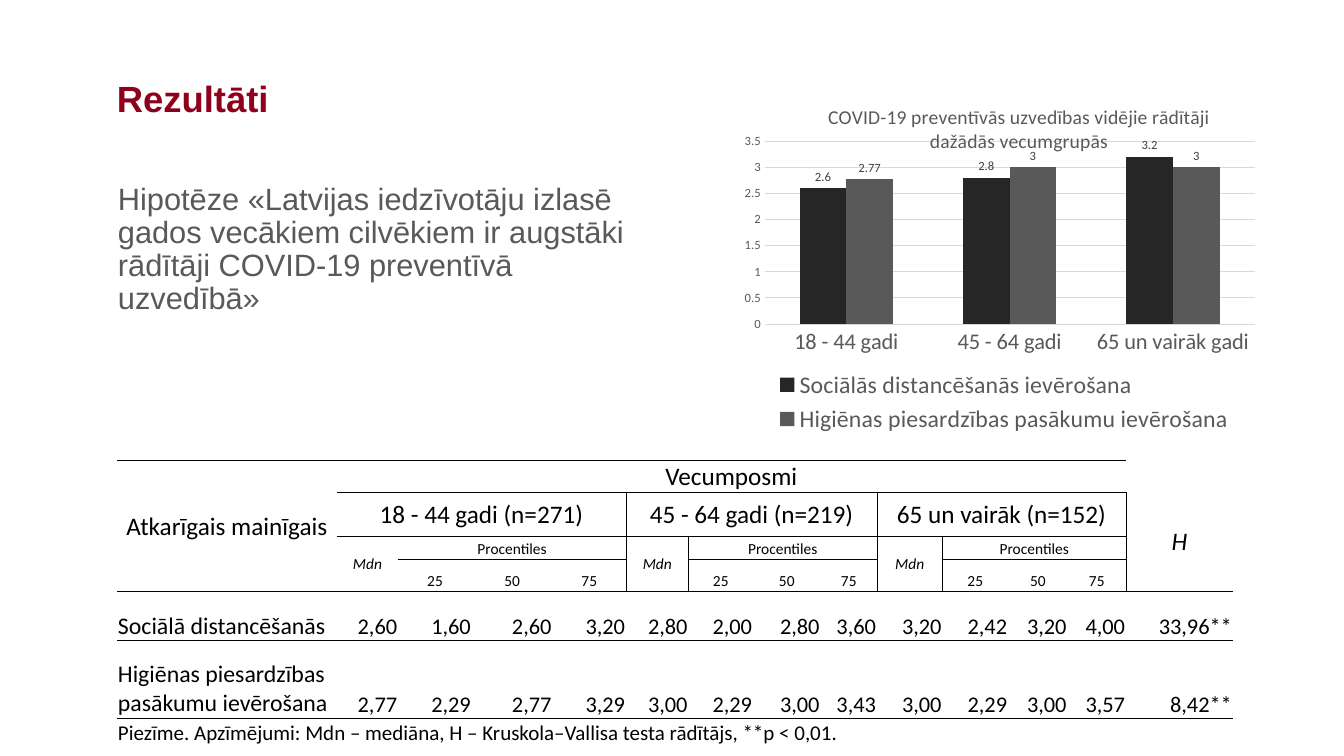
from pptx import Presentation
from pptx import util as u
from pptx.chart.data import CategoryChartData
from pptx.dml.color import RGBColor
from pptx.enum import chart as ch, text as t
from pptx.oxml import parse_xml
from pptx.oxml.ns import nsdecls

# Content
TITLE = "Rezultāti"
CLAIM = ("Hipotēze «Latvijas iedzīvotāju izlasē gados vecākiem cilvēkiem ir "
         "augstāki rādītāji COVID-19 preventīvā uzvedībā»")
HEAD = "COVID-19 preventīvās uzvedības vidējie rādītāji dažādās vecumgrupās"
AGES = ["18 - 44 gadi", "45 - 64 gadi", "65 un vairāk gadi"]
GROUPS = ["18 - 44 gadi (n=271)", "45 - 64 gadi (n=219)", "65 un vairāk (n=152)"]
RANKS = ["25", "50", "75"]
DATA = [
    ["Sociālā distancēšanās", "2,60", "1,60", "2,60", "3,20", "2,80", "2,00",
     "2,80", "3,60", "3,20", "2,42", "3,20", "4,00", "33,96**"],
    ["Higiēnas piesardzības pasākumu ievērošana", "2,77", "2,29", "2,77", "3,29",
     "3,00", "2,29", "3,00", "3,43", "3,00", "2,29", "3,00", "3,57", "8,42**"],
]
NOTE = ("Piezīme. Apzīmējumi: Mdn – mediāna, H – Kruskola–Vallisa testa "
        "rādītājs, **p < 0,01.")
COLS = [218, 61, 73, 80, 73, 62, 64, 67, 56, 65, 65, 59, 58, 106]
ROWS = [31, 44, 22, 32, 49, 77, 28]
# Table rules as row, first column, end column
RULES = [(0, 0, 13), (1, 1, 13), (2, 1, 13), (3, 2, 5), (3, 6, 9), (3, 10, 13),
         (4, 0, 14), (6, 0, 14)]

RED = RGBColor(0x8E, 0x00, 0x1C)
SLATE = RGBColor(0x58, 0x59, 0x5B)
GRAY = RGBColor(0x59, 0x59, 0x59)
DARK = RGBColor(0x26, 0x26, 0x26)
LABEL = RGBColor(0x40, 0x40, 0x40)
GRID = RGBColor(0xD9, 0xD9, 0xD9)
BLACK = RGBColor(0, 0, 0)
SERIES = [("Sociālās distancēšanās ievērošana", (2.6, 2.8, 3.2), DARK),
          ("Higiēnas piesardzības pasākumu ievērošana", (2.77, 3, 3), GRAY)]
LEFT, MID, RIGHT = t.PP_ALIGN.LEFT, t.PP_ALIGN.CENTER, t.PP_ALIGN.RIGHT
TOP, HALF, LOW = t.MSO_ANCHOR.TOP, t.MSO_ANCHOR.MIDDLE, t.MSO_ANCHOR.BOTTOM


def px(n):
    return u.Emu(n * 9144)  # 100 px to the inch


def style(font, size, color, face="Calibri", bold=False, ital=False):
    font.name, font.size, font.bold, font.italic = face, u.Pt(size), bold, ital
    font.color.rgb = color


def write(frame, words, size=18, color=BLACK, align=LEFT, space=None, **kw):
    para = frame.paragraphs[0]
    para.alignment = align
    if space:
        para.line_spacing = space
    run = para.add_run()
    run.text = words
    style(run.font, size, color, **kw)


def block(shape, box, words, **kw):
    shape.left, shape.top, shape.width, shape.height = map(px, box)
    frame = shape.text_frame
    frame.word_wrap = True
    frame.auto_size = t.MSO_AUTO_SIZE.NONE
    frame.vertical_anchor = TOP
    frame.margin_left = frame.margin_right = frame.margin_top = frame.margin_bottom = 0
    write(frame, words, space=0.9, face="Arial", **kw)


def arrange(node, spot, kind="", **pos):
    """Put a chart part at a place given in shares of the chart."""
    for old in node.findall("{*}layout"):
        node.remove(old)
    modes = '<c:xMode val="edge"/><c:yMode val="edge"/>'
    vals = "".join(f'<c:{k} val="{v}"/>' for k, v in pos.items())
    node.insert(spot, parse_xml(f'<c:layout {nsdecls("c")}><c:manualLayout>{kind}{modes}'
                                f"{vals}</c:manualLayout></c:layout>"))


def draw_chart(slide):
    data = CategoryChartData()
    data.categories = AGES
    for name, vals, _ in SERIES:
        data.add_series(name, vals)
    chart = slide.shapes.add_chart(ch.XL_CHART_TYPE.COLUMN_CLUSTERED, px(726), px(57),
                                   px(540), px(378), data).chart
    style(chart.font, 10, BLACK)
    chart.has_title = True
    write(chart.chart_title.text_frame, HEAD, size=14, color=GRAY, align=MID)
    arrange(chart.chart_title._element, 1, x=0.17, y=0.11)

    # Plot and series
    plot = chart.plots[0]
    plot.gap_width, plot.overlap, plot.vary_by_categories = 150, 0, False
    arrange(chart._chartSpace.chart.plotArea, 0, '<c:layoutTarget val="inner"/>',
            x=0.06, y=0.22, w=0.9, h=0.48)
    for bars, (_, _, color) in zip(plot.series, SERIES):
        bars.format.fill.solid()
        bars.format.fill.fore_color.rgb = color
        tags = bars.data_labels
        tags.show_value = True
        tags.position = ch.XL_LABEL_POSITION.OUTSIDE_END
        style(tags.font, 9, LABEL)

    # Axes and legend
    for axis, size in ((chart.category_axis, 16), (chart.value_axis, 9)):
        axis.major_tick_mark = axis.minor_tick_mark = ch.XL_TICK_MARK.NONE
        axis.format.line.fill.background()
        style(axis.tick_labels.font, size, GRAY)
    lines = chart.value_axis.major_gridlines.format.line
    lines.color.rgb, lines.width = GRID, u.Pt(0.75)
    chart.has_legend = True
    chart.legend.position = ch.XL_LEGEND_POSITION.BOTTOM
    chart.legend.include_in_layout = False
    style(chart.legend.font, 17, GRAY)


def cells():
    """Yield row, column, row span, column span, anchor, words and format."""
    mid, tiny = dict(align=MID), dict(align=MID, size=11)
    yield 0, 0, 4, 1, HALF, "Atkarīgais mainīgais", mid
    yield 0, 1, 1, 12, LOW, "Vecumposmi", mid
    yield 1, 13, 3, 1, HALF, "H", dict(mid, ital=True)
    for i, group in enumerate(GROUPS):
        col = 1 + 4 * i
        yield 1, col, 1, 4, HALF, group, mid
        yield 2, col, 2, 1, HALF, "Mdn", dict(tiny, ital=True)
        yield 2, col + 1, 1, 3, LOW, "Procentiles", tiny
        for j, rank in enumerate(RANKS, 1):
            yield 3, col + j, 1, 1, LOW, rank, tiny
    for r, line in enumerate(DATA, 4):
        for c, words in enumerate(line):
            look = dict(size=16, align=RIGHT) if c else dict(size=17)
            yield r, c, 1, 1, LOW, words, look
    yield 6, 0, 1, 14, LOW, NOTE, dict(size=15)


def draw_table(slide):
    table = slide.shapes.add_table(len(ROWS), len(COLS), px(116), px(457),
                                   px(sum(COLS)), px(sum(ROWS))).table
    table.first_row = table.horz_banding = False
    # Plain style without grid
    table._tbl.tblPr.find("{*}tableStyleId").text = "{2D5ABB26-0587-4C30-8999-92F81FD0307C}"
    for col, wide in zip(table.columns, COLS):
        col.width = px(wide)
    for row, high in zip(table.rows, ROWS):
        row.height = px(high)

    # Margins, rules and fill of every cell
    flat = {(r, c) for r, start, stop in RULES for c in range(start, stop)}
    tall = {(r, c) for r in (1, 2, 3) for c in (5, 9)}
    for r in range(len(ROWS)):
        for c in range(len(COLS)):
            cell = table.cell(r, c)
            cell.margin_left = cell.margin_right = cell.margin_top = px(1)
            cell.margin_bottom = 0
            ruled = dict(L=(r, c) in tall, R=(r, c + 1) in tall,
                         T=(r, c) in flat, B=(r + 1, c) in flat)
            for side in filter(ruled.get, ruled):
                cell._tc.get_or_add_tcPr().append(parse_xml(
                    f'<a:ln{side} {nsdecls("a")} w="6350"><a:solidFill>'
                    f'<a:srgbClr val="{BLACK}"/></a:solidFill></a:ln{side}>'))
            cell.fill.background()
            cell.text_frame.paragraphs[0]._p.get_or_add_endParaRPr().set("sz", "1100")

    # Words
    for r, c, high, wide, anchor, words, look in cells():
        cell = table.cell(r, c)
        if high * wide > 1:
            cell.merge(table.cell(r + high - 1, c + wide - 1))
        cell.vertical_anchor = anchor
        write(cell.text_frame, words, **look)


deck = Presentation()
deck.slide_width, deck.slide_height = px(1333), px(750)
page = deck.slides.add_slide(deck.slide_layouts[5])
block(page.shapes.title, (116, 80, 1102, 102), TITLE, size=26, color=RED, bold=True)
block(page.shapes.add_textbox(0, 0, 0, 0), (117, 182, 525, 137), CLAIM, size=22, color=SLATE)
draw_chart(page)
draw_table(page)
deck.save("out.pptx")
